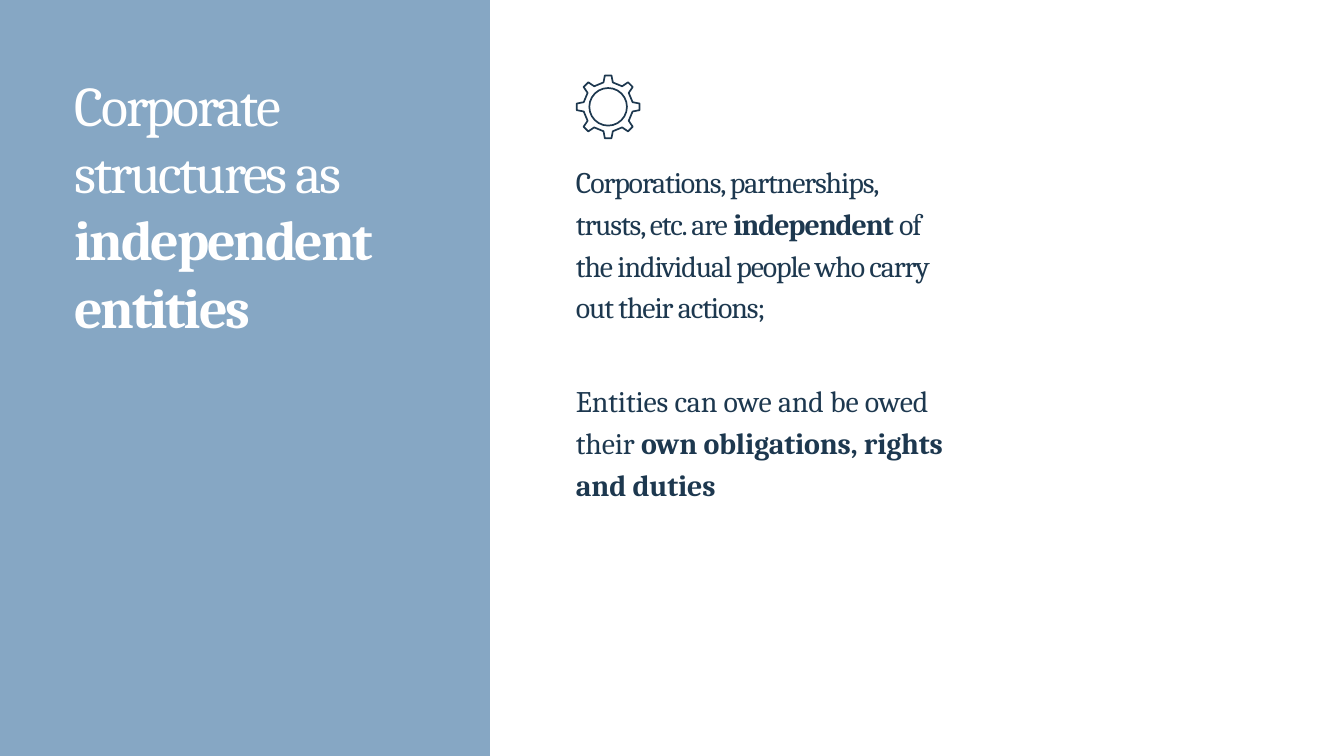
"""Build the slide on corporate structures as independent entities."""
import math

from pptx import Presentation
from pptx import util as u
from pptx.dml.color import RGBColor
from pptx.enum import shapes, text

THEME = {
    "font": "Cambria",
    "panel": RGBColor.from_string("86A7C4"),
    "light": RGBColor.from_string("FFFFFF"),
    "ink": RGBColor.from_string("1D384F"),
    "title": 60,
    "body": 32,
    "stroke": 1.8,
}

PANEL = (0, 0, 7.29, 11.25)
GEAR = {"center": (9.05, 1.59), "teeth": 8, "ring": 0.28,
        "tooth": ((0.37, -10.8), (0.47, -6), (0.47, 6), (0.37, 10.8))}

TEXTS = [
    {"at": (1.11, 1.04, 5.56, 4.03), "size": "title", "color": "light",
     "track": -240, "leading": 1.0,
     "runs": [("Corporate structures as ", False),
              ("independent entities", True)]},
    {"at": (8.57, 2.33, 5.52, 2.53), "size": "body", "color": "ink",
     "track": -120, "leading": 1.17,
     "runs": [("Corporations, partnerships, trusts, etc. are ", False),
              ("independent ", True),
              ("of the individual people who carry out their actions;", False)]},
    {"at": (8.57, 5.59, 5.52, 1.9), "size": "body", "color": "ink",
     "track": -20, "leading": 1.17,
     "runs": [("Entities can owe and be owed their ", False),
              ("own obligations, rights and duties", True)]},
]


def inches(values):
    return [u.Inches(v) for v in values]


def set_all(obj, values):
    for name, value in values.items():
        setattr(obj, name, value)


def add_panel(s):
    sp = s.shapes.add_shape(shapes.MSO_SHAPE.RECTANGLE, *inches(PANEL))
    sp.shadow.inherit = False
    sp.fill.solid()
    sp.fill.fore_color.rgb = THEME["panel"]
    sp.line.fill.background()


def add_text(s, item):
    tf = s.shapes.add_textbox(*inches(item["at"])).text_frame
    set_all(tf, {"word_wrap": True, "margin_left": 0, "margin_right": 0,
                 "margin_top": u.Inches(0.01), "margin_bottom": 0,
                 "auto_size": text.MSO_AUTO_SIZE.SHAPE_TO_FIT_TEXT})
    p = tf.paragraphs[0]
    set_all(p, {"line_spacing": item["leading"], "space_before": u.Pt(0)})
    for words, bold in item["runs"]:
        r = p.add_run()
        r.text = words
        set_all(r.font, {"name": THEME["font"], "bold": bold,
                         "size": u.Pt(THEME[item["size"]])})
        r.font.color.rgb = THEME[item["color"]]
        r._r.get_or_add_rPr().set("spc", str(item["track"]))


def add_gear(s):
    cx, cy = GEAR["center"]
    points = []
    for i in range(GEAR["teeth"]):
        for radius, offset in GEAR["tooth"]:
            a = math.radians(i * 360 / GEAR["teeth"] + offset)
            points.append(inches((cx + radius * math.sin(a),
                                  cy - radius * math.cos(a))))
    builder = s.shapes.build_freeform(*points[0])
    builder.add_line_segments(points[1:], close=True)
    d = GEAR["ring"]
    ring = s.shapes.add_shape(shapes.MSO_SHAPE.OVAL,
                              *inches((cx - d, cy - d, 2 * d, 2 * d)))
    for sp in (builder.convert_to_shape(), ring):
        sp.shadow.inherit = False
        sp.fill.background()
        sp.line.color.rgb = THEME["ink"]
        sp.line.width = u.Pt(THEME["stroke"])


def main():
    prs = Presentation()
    set_all(prs, {"slide_width": u.Inches(20), "slide_height": u.Inches(11.25)})
    s = prs.slides.add_slide(prs.slide_layouts[6])
    add_panel(s)
    for item in TEXTS:
        add_text(s, item)
    add_gear(s)
    prs.save("out.pptx")


if __name__ == "__main__":
    main()
